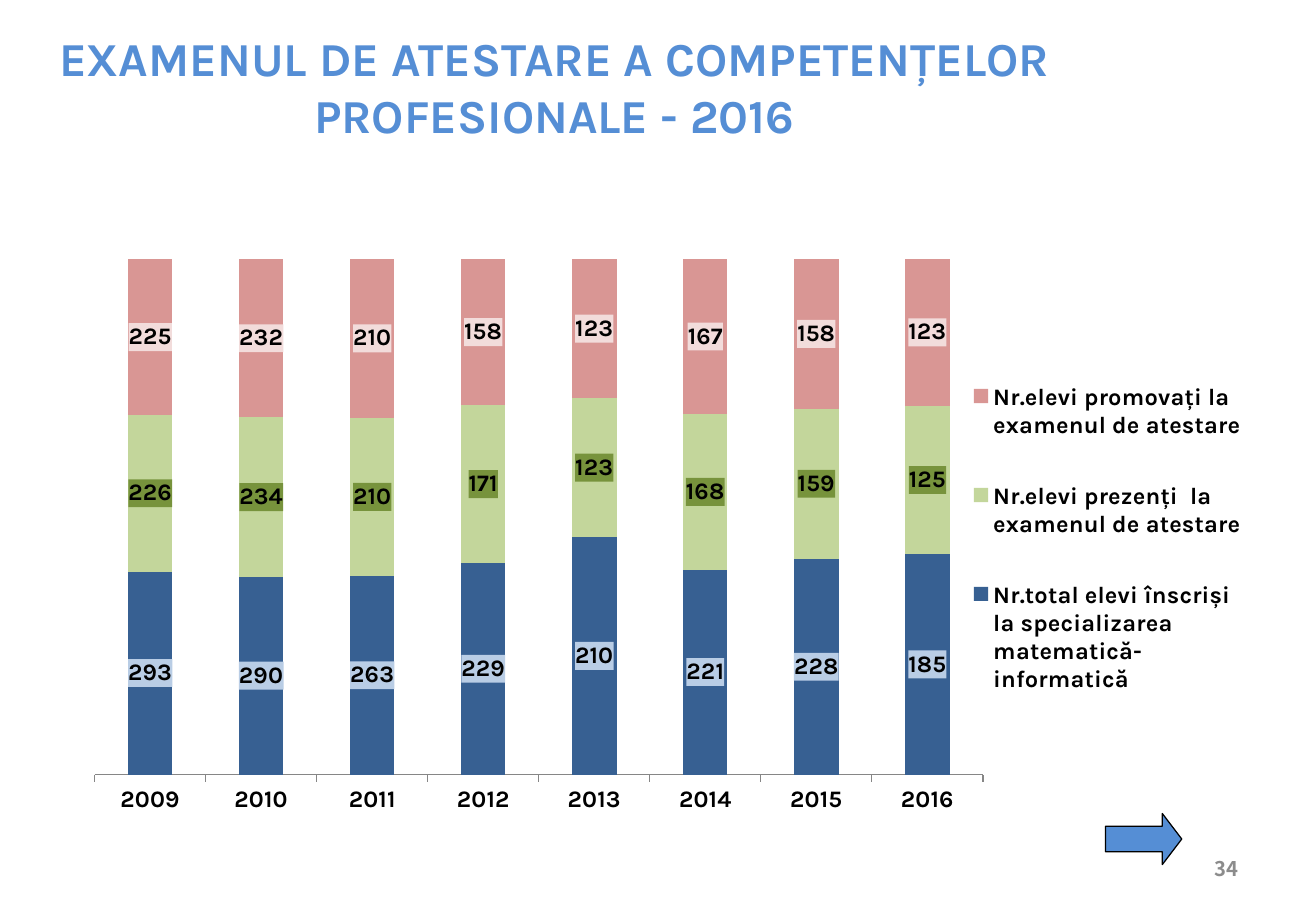
from dataclasses import dataclass

import pptx
import pptx.chart.data
import pptx.dml.color
import pptx.enum.chart
import pptx.enum.shapes
import pptx.enum.text
import pptx.oxml
import pptx.oxml.ns
import pptx.util

WIDTH, HEIGHT = pptx.util.Inches(10.83), pptx.util.Inches(7.5)


@dataclass(frozen=True)
class Theme:
    font: str = "Karla"
    number_font: str = "Noto Sans CJK KR"
    accent: str = "558ED5"
    ink: str = "000000"
    muted: str = "8C8C8C"
    axis: str = "868686"
    title_size: int = 28
    chart_size: int = 14
    number_size: int = 12


THEME = Theme()
YEARS = [str(year) for year in range(2009, 2017)]
# name, values, bar colour, label background
PUPILS = [
    ("Nr.total elevi înscriși la specializarea matematică-informatică",
     (293, 290, 263, 229, 210, 221, 228, 185), "376092", "B9CDE5"),
    ("Nr.elevi prezenți  la examenul de atestare",
     (226, 234, 210, 171, 123, 168, 159, 125), "C3D69B", "77933C"),
    ("Nr.elevi promovați la examenul de atestare",
     (225, 232, 210, 158, 123, 167, 158, 123), "D99694", "F2DCDB"),
]


def rgb(value):
    return pptx.dml.color.RGBColor.from_string(value)


def share(left, top, width, height):
    """Turn shares of the slide into a box in EMU."""
    return (round(left * WIDTH), round(top * HEIGHT),
            round(width * WIDTH), round(height * HEIGHT))


def style(font, name, size, color, bold=True):
    font.name, font.size, font.bold = name, pptx.util.Pt(size), bold
    font.color.rgb = rgb(color)


def chart_xml(body):
    return pptx.oxml.parse_xml(body.replace(
        ">", f" {pptx.oxml.ns.nsdecls('c', 'a')}>", 1))


def manual_layout(x, y, w, h, inner=False):
    target = '<c:layoutTarget val="inner"/>' if inner else ""
    sizes = "".join(f'<c:{key} val="{val}"/>'
                    for key, val in zip("xywh", (x, y, w, h)))
    return chart_xml(
        f'<c:layout><c:manualLayout>{target}<c:xMode val="edge"/>'
        f'<c:yMode val="edge"/>{sizes}</c:manualLayout></c:layout>')


def text_line(slide, box, text, align):
    label = slide.shapes.add_textbox(*box)
    frame = label.text_frame
    frame.word_wrap = True
    frame.vertical_anchor = pptx.enum.text.MSO_ANCHOR.MIDDLE
    paragraph = frame.paragraphs[0]
    paragraph.text = text
    paragraph.alignment = align
    return paragraph.font


def add_title(slide, box):
    font = text_line(slide, box,
                     "EXAMENUL DE ATESTARE A COMPETENȚELOR\vPROFESIONALE - 2016",
                     pptx.enum.text.PP_ALIGN.CENTER)
    style(font, THEME.font, THEME.title_size, THEME.accent)


def style_series(series, color, label_fill):
    series.format.fill.solid()
    series.format.fill.fore_color.rgb = rgb(color)
    labels = series.data_labels
    labels.show_value = True
    style(labels.font, THEME.font, THEME.chart_size, THEME.ink)
    text_props = series._element.find(
        f".//{pptx.oxml.ns.qn('c:dLbls')}/{pptx.oxml.ns.qn('c:txPr')}")
    text_props.addprevious(chart_xml(
        f'<c:spPr><a:solidFill><a:srgbClr val="{label_fill}"/>'
        '</a:solidFill></c:spPr>'))


def add_results_chart(slide, box):
    data = pptx.chart.data.CategoryChartData()
    data.categories = YEARS
    for name, values, _, _ in PUPILS:
        data.add_series(name, values)
    chart = slide.shapes.add_chart(
        pptx.enum.chart.XL_CHART_TYPE.COLUMN_STACKED_100, *box, data).chart
    style(chart.font, THEME.font, THEME.chart_size, THEME.ink)
    chart.has_title = False

    plot = chart.plots[0]
    plot.gap_width, plot.overlap = 150, 100
    plot.vary_by_categories = False
    for series, (_, _, color, label_fill) in zip(plot.series, PUPILS):
        style_series(series, color, label_fill)

    chart.value_axis.visible = False
    chart.value_axis.has_major_gridlines = False
    years = chart.category_axis
    years.major_tick_mark = pptx.enum.chart.XL_TICK_MARK.OUTSIDE
    years.format.line.color.rgb = rgb(THEME.axis)

    chart.has_legend = True
    chart.legend.position = pptx.enum.chart.XL_LEGEND_POSITION.RIGHT
    chart.legend.include_in_layout = False
    legend = chart.legend._element
    area = plot._element.getparent()
    for part in (legend, area):
        for layout in part.findall(pptx.oxml.ns.qn("c:layout")):
            part.remove(layout)
    area.insert(0, manual_layout(0.02, 0.05, 0.75, 0.82, inner=True))
    legend.find(pptx.oxml.ns.qn("c:legendPos")).addnext(
        manual_layout(0.76, 0.18, 0.23, 0.63))


def add_page_number(slide, box):
    font = text_line(slide, box, "34", pptx.enum.text.PP_ALIGN.RIGHT)
    style(font, THEME.number_font, THEME.number_size, THEME.muted)


def add_next_arrow(slide, box):
    arrow = slide.shapes.add_shape(
        pptx.enum.shapes.MSO_SHAPE.RIGHT_ARROW, *box)
    arrow.adjustments[1] = 0.38
    arrow.shadow.inherit = False
    arrow.fill.solid()
    arrow.fill.fore_color.rgb = rgb(THEME.accent)
    arrow.line.color.rgb = rgb(THEME.ink)
    arrow.line.width = pptx.util.Pt(0.75)


def main():
    deck = pptx.Presentation()
    deck.slide_width, deck.slide_height = WIDTH, HEIGHT
    slide = deck.slides.add_slide(deck.slide_layouts[6])
    add_results_chart(slide, share(0.054, 0.25, 0.9, 0.69))
    add_title(slide, share(-0.004, 0.033, 0.85, 0.123))
    add_page_number(slide, share(0.717, 0.927, 0.233, 0.053))
    add_next_arrow(slide, share(0.84, 0.893, 0.058, 0.056))
    deck.save("out.pptx")


if __name__ == "__main__":
    main()
